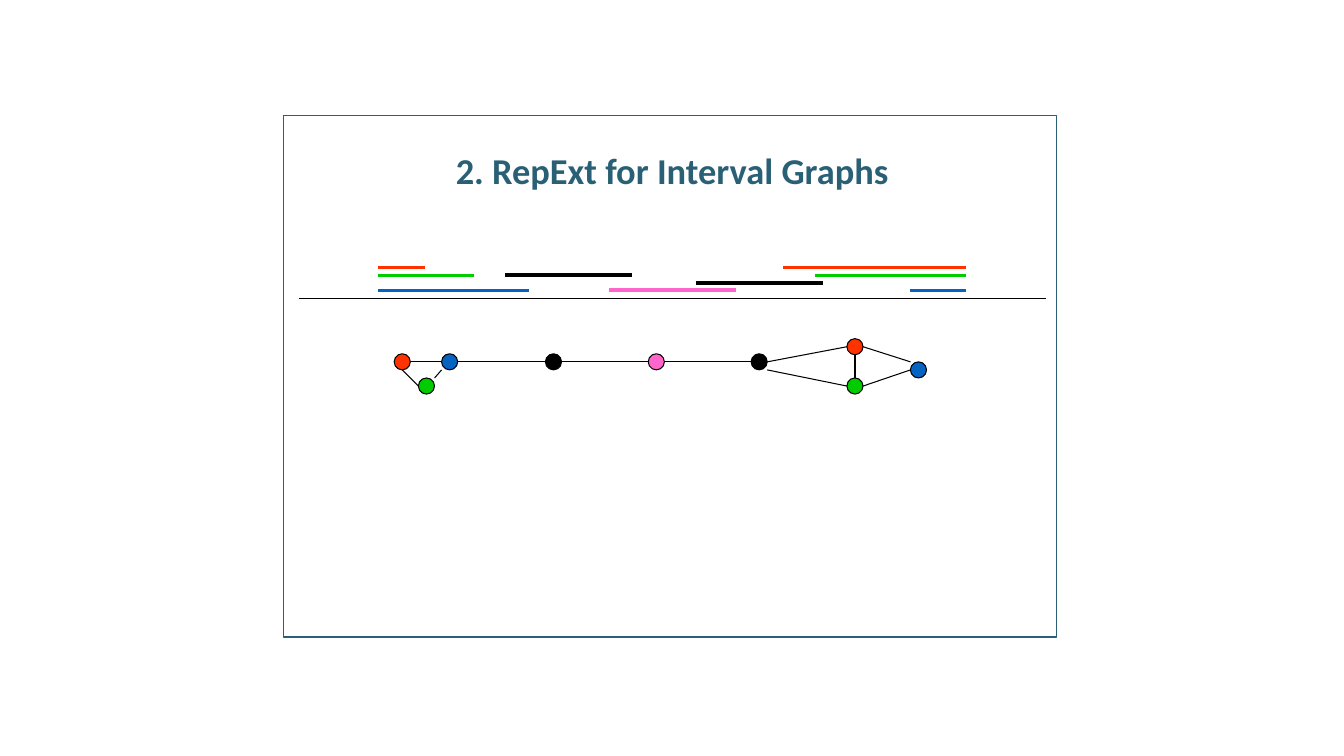
from pptx import Presentation
from pptx.dml.color import RGBColor
from pptx.enum.shapes import MSO_CONNECTOR, MSO_SHAPE
from pptx.enum.text import MSO_ANCHOR, PP_ALIGN
from pptx.oxml.ns import qn
from pptx.util import Inches, Pt
from lxml import etree

TEAL = RGBColor(0x2A, 0x60, 0x76)
WHITE = RGBColor(0xFF, 0xFF, 0xFF)
BLACK = RGBColor(0, 0, 0)
RED = RGBColor(0xFF, 0x33, 0)
GREEN = RGBColor(0, 0xCC, 0)
BLUE = RGBColor(0x05, 0x63, 0xC1)
PINK = RGBColor(0xFF, 0x66, 0xCC)

TITLE = "2. RepExt for Interval Graphs"
THIN = 0.75
LANES = (2.65, 2.73, 2.81, 2.88)
AXIS = (2.97, 10.37, 2.96)
INTERVALS = [
    (6.04, 7.30, 3, PINK, 3),
    (6.90, 8.16, 2, BLACK, 3),
    (5.01, 6.27, 1, BLACK, 3),
    (3.75, 5.25, 3, BLUE, 2.25),
    (9.03, 9.58, 3, BLUE, 2.25),
    (8.08, 9.58, 1, GREEN, 2.25),
    (3.75, 4.70, 1, GREEN, 2.25),
    (3.75, 4.22, 0, RED, 2.25),
    (7.77, 9.58, 0, RED, 2.25),
]

RADIUS = 0.08
VERTICES = {
    "left red": (3.99, 3.59, RED),
    "left green": (4.23, 3.83, GREEN),
    "left blue": (4.46, 3.59, BLUE),
    "first black": (5.49, 3.59, BLACK),
    "second black": (7.53, 3.59, BLACK),
    "pink": (6.51, 3.59, PINK),
    "right red": (8.48, 3.44, RED),
    "right green": (8.48, 3.83, GREEN),
    "right blue": (9.11, 3.67, BLUE),
}
SIDES = {"N": (0, -1), "S": (0, 1), "W": (-1, 0), "E": (1, 0),
         "NE": (1, -1), "NW": (-1, -1), "SE": (1, 1), "SW": (-1, 1)}
EDGES = [
    ("left red", "E", "left blue", "W"),
    ("first black", "E", "pink", "W"),
    ("pink", "E", "second black", "W"),
    ("second black", "E", "right red", "W"),
    ("second black", "SE", "right green", "W"),
    ("right green", "N", "right red", "S"),
    ("right blue", "NW", "right red", "E"),
    ("right blue", "W", "right green", "E"),
    ("left blue", "SW", "left green", "NE"),
    ("left red", "S", "left green", "W"),
    ("left blue", "E", "first black", "W"),
]

prs = Presentation()
prs.slide_width, prs.slide_height = Inches(13.33), Inches(7.5)
slide = prs.slides.add_slide(prs.slide_layouts[6])


def add_outlined(kind, left, top, width, height, fill, outline):
    shape = slide.shapes.add_shape(
        kind, Inches(left), Inches(top), Inches(width), Inches(height))
    shape.shadow.inherit = False
    shape.fill.solid()
    shape.fill.fore_color.rgb = fill
    shape.line.color.rgb = outline
    shape.line.width = Pt(THIN)


def add_line(start, end, color, weight):
    line = slide.shapes.add_connector(
        MSO_CONNECTOR.STRAIGHT, *map(Inches, (*start, *end)))
    line.line.color.rgb = color
    line.line.width = Pt(weight)
    etree.SubElement(line._element.spPr, qn("a:effectLst"))


def edge_point(vertex, side):
    x, y, _ = VERTICES[vertex]
    dx, dy = SIDES[side]
    return x + dx * RADIUS, y + dy * RADIUS


add_outlined(MSO_SHAPE.RECTANGLE, 2.81, 1.15, 7.67, 5.17, WHITE, TEAL)

axis_left, axis_right, axis_y = AXIS
add_line((axis_left, axis_y), (axis_right, axis_y), BLACK, THIN)
for left, right, lane, color, weight in INTERVALS:
    add_line((left, LANES[lane]), (right, LANES[lane]), color, weight)

for x, y, color in VERTICES.values():
    add_outlined(MSO_SHAPE.OVAL, x - RADIUS, y - RADIUS,
                 2 * RADIUS, 2 * RADIUS, color, BLACK)
for source, source_side, target, target_side in EDGES:
    add_line(edge_point(source, source_side), edge_point(target, target_side),
             BLACK, THIN)

title = slide.shapes.add_textbox(
    Inches(2.81), Inches(1.42), Inches(7.72), Inches(1.19)).text_frame
title.word_wrap = True
title.vertical_anchor = MSO_ANCHOR.TOP
heading = title.paragraphs[0]
heading.alignment = PP_ALIGN.CENTER
run = heading.add_run()
run.text = TITLE
run.font.name = "Calibri"
run.font.size = Pt(26)
run.font.bold = True
run.font.color.rgb = TEAL

prs.save("out.pptx")
